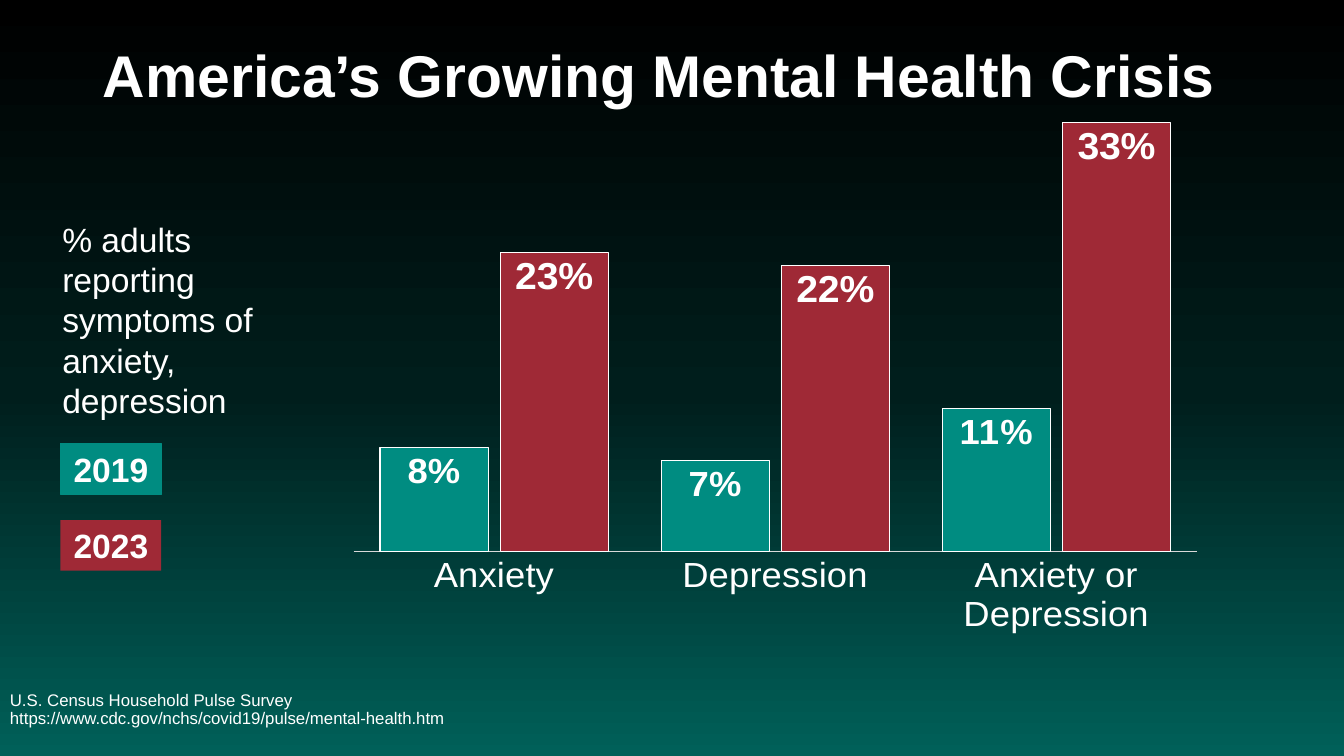
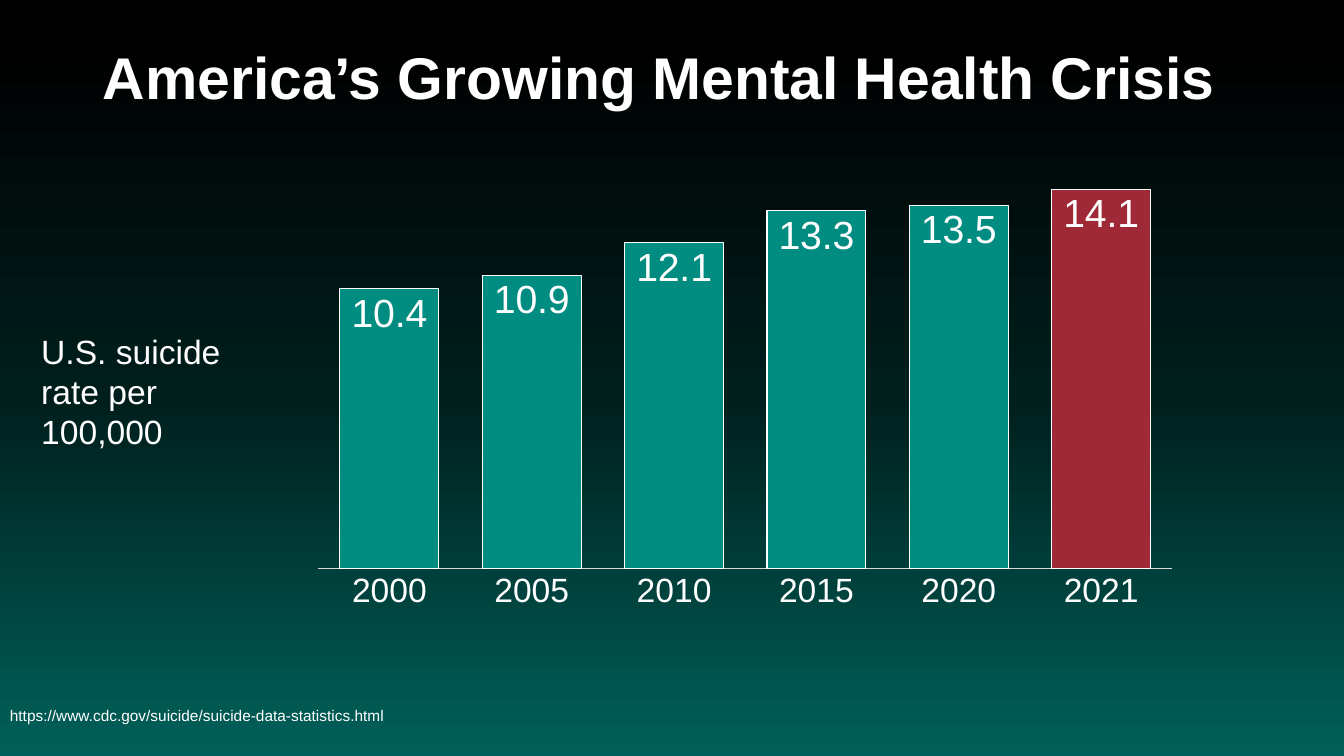
"""Build two slides on the growth of mental health problems in America."""
from copy import deepcopy

from pptx import Presentation
from pptx.chart.data import CategoryChartData
from pptx.dml.color import RGBColor
from pptx.enum.chart import XL_CHART_TYPE, XL_LABEL_POSITION, XL_TICK_MARK
from pptx.enum.shapes import MSO_SHAPE
from pptx.enum.text import MSO_ANCHOR, PP_ALIGN
from pptx.oxml import parse_xml
from pptx.oxml.ns import nsdecls
from pptx.util import Inches, Pt

SLIDE_WIDTH, SLIDE_HEIGHT = Inches(13.33), Inches(7.5)
FONT = "Arial"
BLACK = RGBColor(0x00, 0x00, 0x00)
DARK_TEAL = RGBColor(0x00, 0x1E, 0x1C)
DEEP_TEAL = RGBColor(0x00, 0x60, 0x59)
TEAL = RGBColor(0x00, 0x8C, 0x81)
RED = RGBColor(0x9F, 0x29, 0x36)
WHITE = RGBColor(0xFF, 0xFF, 0xFF)
GREY = RGBColor(0xD9, 0xD9, 0xD9)
THIN = Pt(0.75)

TITLE = "America’s Growing Mental Health Crisis"
BLANK_LAYOUT = 6
COLUMNS = XL_CHART_TYPE.COLUMN_CLUSTERED
INSIDE_END = XL_LABEL_POSITION.INSIDE_END
NO_TICKS = XL_TICK_MARK.NONE
RECTANGLE = MSO_SHAPE.RECTANGLE
TOP, MIDDLE = MSO_ANCHOR.TOP, MSO_ANCHOR.MIDDLE
LEFT, CENTER = PP_ALIGN.LEFT, PP_ALIGN.CENTER


def area(left, top, width, height):
    """Turn percentages of the slide's size into a position and a size."""
    return (int(SLIDE_WIDTH * left / 100), int(SLIDE_HEIGHT * top / 100),
            int(SLIDE_WIDTH * width / 100), int(SLIDE_HEIGHT * height / 100))


def style_font(font, size, bold=False, color=WHITE):
    """Set the shared typeface with a size, weight and colour."""
    font.name, font.size, font.bold = FONT, Pt(size), bold
    font.color.rgb = color


def write_text(shape, text, size, bold=False, anchor=TOP, align=LEFT,
               line_spacing=1.0, space_after=0):
    """Write one paragraph for each line of the text."""
    frame = shape.text_frame
    frame.word_wrap = True
    frame.vertical_anchor = anchor
    frame.text = text
    for paragraph in frame.paragraphs:
        paragraph.alignment = align
        paragraph.line_spacing = line_spacing
        paragraph.space_after = Pt(space_after)
        for run in paragraph.runs:
            style_font(run.font, size, bold)


def add_text(slide, place, text, size, **text_format):
    """Add a text box."""
    write_text(slide.shapes.add_textbox(*place), text, size, **text_format)


def add_key(slide, place, text, color, outlined=False):
    """Add a coloured rectangle that names a chart series."""
    shape = slide.shapes.add_shape(RECTANGLE, *place)
    shape.shadow.inherit = False
    shape.fill.solid()
    shape.fill.fore_color.rgb = color
    if outlined:
        shape.line.color.rgb = color
        shape.line.width = THIN
    else:
        shape.line.fill.background()
    write_text(shape, text, 24, bold=True, anchor=MIDDLE, align=CENTER)


def paint_background(slide, black_until):
    """Fill the background with a vertical gradient from black to teal."""
    fill = slide.background.fill
    fill.gradient()
    fill.gradient_angle = 270
    stop_list = slide.element.xpath(".//a:gsLst")[0]
    stop_list.insert(1, deepcopy(stop_list[0]))
    stops = ((black_until, BLACK), (0.52, DARK_TEAL), (1, DEEP_TEAL))
    for stop, (position, color) in zip(fill.gradient_stops, stops):
        stop.position = position
        stop.color.rgb = color


def add_base_slide(presentation, black_until, title_place):
    """Add a slide with the shared background and title."""
    slide = presentation.slides.add_slide(
        presentation.slide_layouts[BLANK_LAYOUT])
    paint_background(slide, black_until)
    add_text(slide, title_place, TITLE, 42, bold=True, anchor=MIDDLE,
             line_spacing=0.9)
    return slide


def add_source(slide, place, text, size):
    """Add the source note at the foot of a slide."""
    add_text(slide, place, text, size, anchor=MIDDLE, line_spacing=0.9)


def set_plot_area(chart, left, top, width, height):
    """Fix the inner plot area as shares of the chart's size."""
    plot_area = chart.element.xpath(".//c:plotArea")[0]
    for layout in plot_area.xpath("./c:layout"):
        plot_area.remove(layout)
    sizes = (("x", left), ("y", top), ("w", width), ("h", height))
    modes = '<c:xMode val="edge"/><c:yMode val="edge"/>'
    values = "".join(f'<c:{name} val="{value}"/>' for name, value in sizes)
    plot_area.insert(0, parse_xml(
        f'<c:layout {nsdecls("c")}><c:manualLayout>'
        f'<c:layoutTarget val="inner"/>{modes}{values}'
        '</c:manualLayout></c:layout>'))


def style_bar(chart_format, color):
    """Fill a bar and give it a thin white outline."""
    chart_format.fill.solid()
    chart_format.fill.fore_color.rgb = color
    chart_format.line.color.rgb = WHITE
    chart_format.line.width = THIN


def style_series(series, color, label_size, bold, number_format):
    """Style the bars of a series and the labels inside them."""
    series.invert_if_negative = False
    style_bar(series.format, color)
    labels = series.data_labels
    labels.show_value = True
    labels.position = INSIDE_END
    labels.number_format = number_format
    labels.number_format_is_linked = False
    style_font(labels.font, label_size, bold)


def add_column_chart(slide, place, categories, series_values, plot_area,
                     axis_size, maximum, number_format, gap, overlap):
    """Add a column chart without legend, gridlines or value axis."""
    data = CategoryChartData(number_format=number_format)
    data.categories = categories
    for number, values in enumerate(series_values, 1):
        data.add_series(f"Series {number}", values)
    chart = slide.shapes.add_chart(COLUMNS, *place, data).chart
    style_font(chart.font, 10, color=BLACK)
    chart.has_title = chart.has_legend = False
    plot = chart.plots[0]
    plot.vary_by_categories = False
    plot.gap_width, plot.overlap = gap, overlap
    value_axis = chart.value_axis
    value_axis.visible = value_axis.has_major_gridlines = False
    value_axis.minimum_scale, value_axis.maximum_scale = 0, maximum
    category_axis = chart.category_axis
    category_axis.major_tick_mark = category_axis.minor_tick_mark = NO_TICKS
    category_axis.format.line.color.rgb = GREY
    category_axis.format.line.width = THIN
    style_font(category_axis.tick_labels.font, axis_size)
    set_plot_area(chart, *plot_area)
    return plot.series


def build_symptoms_slide(presentation):
    """Compare reported symptoms in 2019 and 2023."""
    slide = add_base_slide(presentation, 0, area(6.9, 2.8, 86.25, 15.2))
    add_source(slide, area(0, 87.73, 70.6, 12.27),
               "U.S. Census Household Pulse Survey\n"
               "https://www.cdc.gov/nchs/covid19/pulse/mental-health.htm", 12)
    before, after = add_column_chart(
        slide, area(25.2, 10.53, 64.97, 73.33),
        ("Anxiety", "Depression", "Anxiety or Depression"),
        ((0.08, 0.07, 0.11), (0.23, 0.22, 0.33)),
        plot_area=(0.017, 0.032, 0.966, 0.858), axis_size=26, maximum=0.35,
        number_format="0%", gap=49, overlap=-11)
    style_series(before, TEAL, 26, True, "0%")
    style_series(after, RED, 28, True, "0%")
    add_text(slide, area(3.9, 28.27, 17.33, 28.27),
             "% adults reporting symptoms of anxiety, depression", 24,
             space_after=12)
    add_key(slide, area(4.5, 58.67, 7.5, 6.7), "2019", TEAL, outlined=True)
    add_key(slide, area(4.5, 68.8, 7.5, 6.7), "2023", RED)


def build_suicide_slide(presentation):
    """Show the suicide rate from 2000 to 2021."""
    slide = add_base_slide(presentation, 0.05, area(6.9, 0.93, 86.25, 19.33))
    add_source(slide, area(0, 89.47, 70.6, 10.53),
               "https://www.cdc.gov/suicide/suicide-data-statistics.html", 11)
    rates, = add_column_chart(
        slide, area(23.48, 14.4, 65.79, 77.33),
        ("2000", "2005", "2010", "2015", "2020", "2021"),
        ((10.4, 10.9, 12.1, 13.3, 13.5, 14.1),),
        plot_area=(0.003, 0.05, 0.966, 0.736), axis_size=24, maximum=16,
        number_format="0.0", gap=44, overlap=-27)
    style_series(rates, TEAL, 28, False, "0.0")
    style_bar(rates.points[5].format, RED)
    add_text(slide, area(2.33, 43.07, 17.33, 17.47),
             "U.S. suicide rate per 100,000", 24, space_after=12)


def main():
    """Build and save the presentation."""
    presentation = Presentation()
    presentation.slide_width = SLIDE_WIDTH
    presentation.slide_height = SLIDE_HEIGHT
    build_symptoms_slide(presentation)
    build_suicide_slide(presentation)
    presentation.save("out.pptx")


if __name__ == "__main__":
    main()
